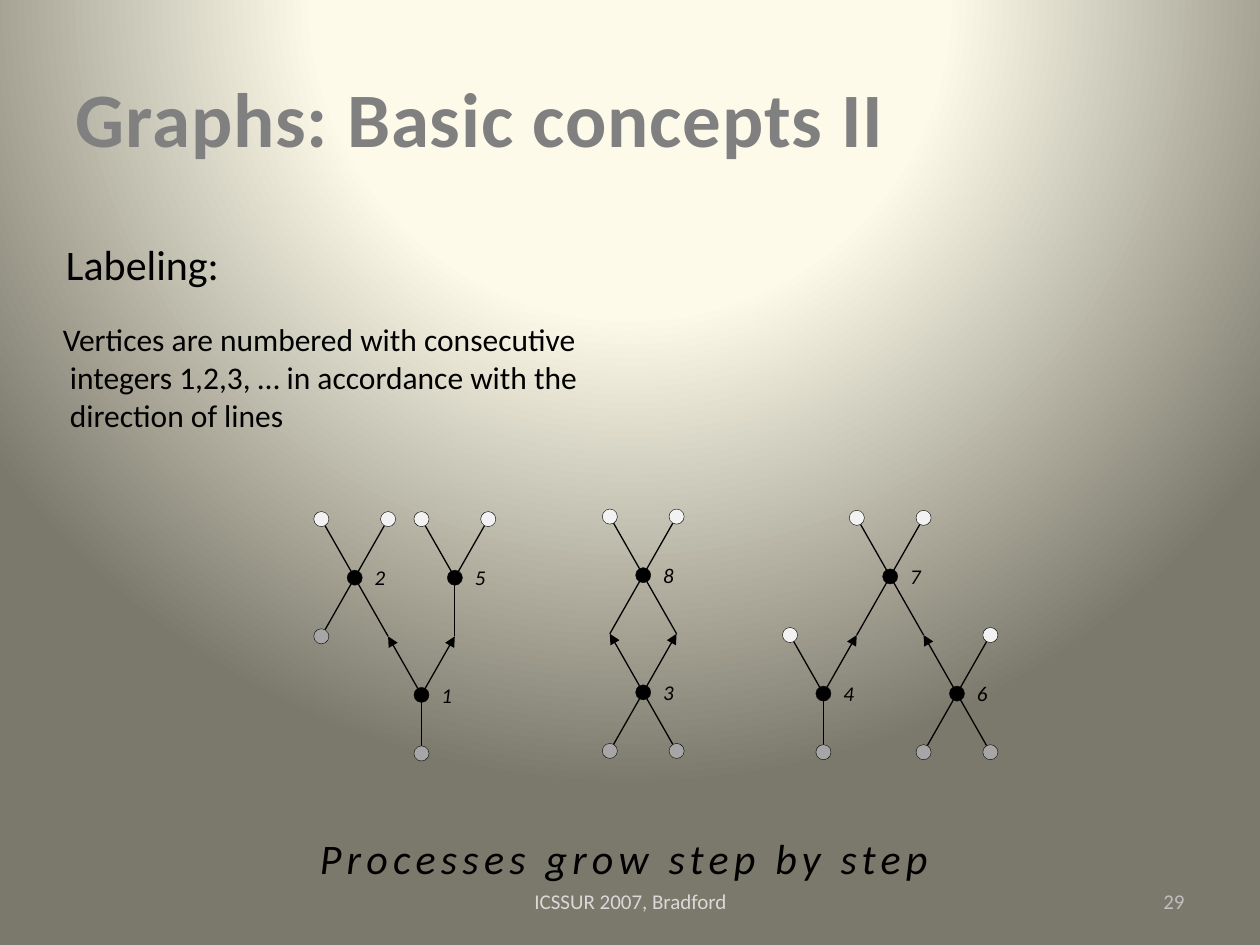
from lxml.etree import SubElement
from pptx import Presentation
from pptx.dml.color import RGBColor
from pptx.enum.shapes import MSO_CONNECTOR as Connector, MSO_SHAPE as Shape
from pptx.enum.text import MSO_ANCHOR as Anchor, PP_ALIGN as Align
from pptx.oxml import parse_xml
from pptx.oxml.ns import nsdecls, qn
from pptx.util import Inches, Pt

FONT = "Calibri"
BLACK = "000000"
DOT = 0.12
COLUMN = 0.53 / 2
RISE = 0.93 / 2
UPPER, LOWER = RISE, 3 * RISE
BACKGROUND = [(0, "FDFAEA"), (40, "FDFAEA"), (100, "7B796B")]
DIRECTIONS = {"nw": (-1, -1), "ne": (1, -1), "sw": (-1, 1), "se": (1, 1), "s": (0, 1)}
END_FILLS = {"out": "F2F2F2", "in": "A6A6A6"}

GRAPHS = [
    (2.55, 4.12, [
        ("1", 3, LOWER, {"nw": "arrow", "ne": "arrow", "s": "in"}),
        ("2", 1, UPPER, {"nw": "out", "ne": "out", "sw": "in", "se": "joined"}),
        ("5", 4, UPPER, {"nw": "out", "ne": "out", "s": "joined"}),
    ]),
    (4.84, 4.1, [
        ("3", 1, LOWER, {"nw": "arrow", "ne": "arrow", "sw": "in", "se": "in"}),
        ("8", 1, UPPER, {"nw": "out", "ne": "out", "sw": "joined", "se": "joined"}),
    ]),
    (6.27, 4.11, [
        ("4", 1, LOWER, {"nw": "out", "ne": "arrow", "s": "in"}),
        ("7", 3, UPPER, {"nw": "out", "ne": "out", "sw": "joined", "se": "joined"}),
        ("6", 5, LOWER, {"nw": "arrow", "ne": "out", "sw": "in", "se": "in"}),
    ]),
]


def rgb(value):
    return RGBColor.from_string(value)


def set_background(slide):
    stops = "".join(
        f'<a:gs pos="{place * 1000}"><a:srgbClr val="{color}"/></a:gs>'
        for place, color in BACKGROUND
    )
    background = parse_xml(
        f'<p:bg {nsdecls("p", "a")}><p:bgPr><a:gradFill rotWithShape="1">'
        f'<a:gsLst>{stops}</a:gsLst><a:path path="circle">'
        '<a:fillToRect l="50000" t="-80000" r="50000" b="180000"/></a:path>'
        '</a:gradFill><a:effectLst/></p:bgPr></p:bg>'
    )
    slide.element.cSld.insert(0, background)


def set_spacing(paragraph, points):
    for run in paragraph.runs:
        run._r.get_or_add_rPr().set("spc", str(int(points * 100)))


def add_title(slide, left, top, width, height, wording):
    title = slide.shapes.title
    title.left, title.top = Inches(left), Inches(top)
    title.width, title.height = Inches(width), Inches(height)
    title.text_frame.text = wording
    title.text_frame.vertical_anchor = Anchor.MIDDLE
    paragraph = title.text_frame.paragraphs[0]
    paragraph.alignment = Align.LEFT
    font = paragraph.font
    font.name, font.size, font.bold = FONT, Pt(44), True
    font.color.rgb = rgb("808080")
    set_spacing(paragraph, 0.5)


def add_text(slide, left, top, width, height, lines, size, color=BLACK,
             italic=False, align=Align.LEFT, anchor=Anchor.MIDDLE, spacing=0):
    box = slide.shapes.add_textbox(Inches(left), Inches(top), Inches(width), Inches(height))
    frame = box.text_frame
    frame.word_wrap = True
    frame.vertical_anchor = anchor
    frame.text = "\n".join(lines)
    for paragraph in frame.paragraphs:
        paragraph.alignment = align
        font = paragraph.font
        font.name, font.size, font.italic = FONT, Pt(size), italic
        font.color.rgb = rgb(color)
        if spacing:
            set_spacing(paragraph, spacing)


def add_edge(slide, start, end, arrow):
    edge = slide.shapes.add_connector(Connector.STRAIGHT, *map(Inches, start + end))
    edge.line.color.rgb = rgb(BLACK)
    edge.line.width = Pt(0.75)
    if arrow:
        SubElement(edge.line._get_or_add_ln(), qn("a:tailEnd"), type="triangle")
    SubElement(edge._element.spPr, qn("a:effectLst"))


def add_dot(slide, center, color):
    x, y = center
    dot = slide.shapes.add_shape(Shape.OVAL, Inches(x - DOT / 2), Inches(y - DOT / 2),
                                 Inches(DOT), Inches(DOT))
    dot.shadow.inherit = False
    dot.fill.solid()
    dot.fill.fore_color.rgb = rgb(color)
    dot.line.color.rgb = rgb("0D0D0D")
    dot.line.width = Pt(0.25)


def add_graph(slide, left, top, vertices):
    dots = []
    for number, column, depth, ends in vertices:
        x, y = left + column * COLUMN, top + depth
        dots.append(((x, y), BLACK))
        for direction, kind in ends.items():
            across, down = DIRECTIONS[direction]
            end = (x + across * COLUMN, y + down * RISE)
            add_edge(slide, (x, y), end, kind == "arrow")
            if kind in END_FILLS:
                dots.append((end, END_FILLS[kind]))
        add_text(slide, x + 0.06, y - 0.15, 0.29, 0.3, [number], 12,
                 italic=True, anchor=Anchor.TOP)
    for center, color in dots:
        add_dot(slide, center, color)


def add_footer(slide, top, height):
    add_text(slide, 3.42, top, 3.17, height, ["ICSSUR 2007, Bradford"], 12,
             "D9D9D9", align=Align.CENTER)
    add_text(slide, 7.17, top, 2.33, height, ["29"], 12, "BFBFBF", align=Align.RIGHT)


def main():
    deck = Presentation()
    deck.slide_width, deck.slide_height = Inches(10), Inches(7.5)
    slide = deck.slides.add_slide(deck.slide_layouts[5])
    set_background(slide)
    add_title(slide, 0.5, 0.3, 9, 1.25, "Graphs: Basic concepts II")
    add_footer(slide, 6.95, 0.4)
    add_text(slide, 0.35, 1.75, 1.82, 0.68, [" Labeling:"], 24)
    add_text(slide, 0.4, 2.43, 4.49, 1.12, [
        "Vertices are numbered with consecutive",
        " integers 1,2,3, … in accordance with the",
        " direction of lines",
    ], 18)
    for left, top, vertices in GRAPHS:
        add_graph(slide, left, top, vertices)
    add_text(slide, 2.44, 6.47, 5.44, 0.68, ["Processes grow step by step"], 24,
             italic=True, spacing=3)
    deck.save("out.pptx")


if __name__ == "__main__":
    main()
